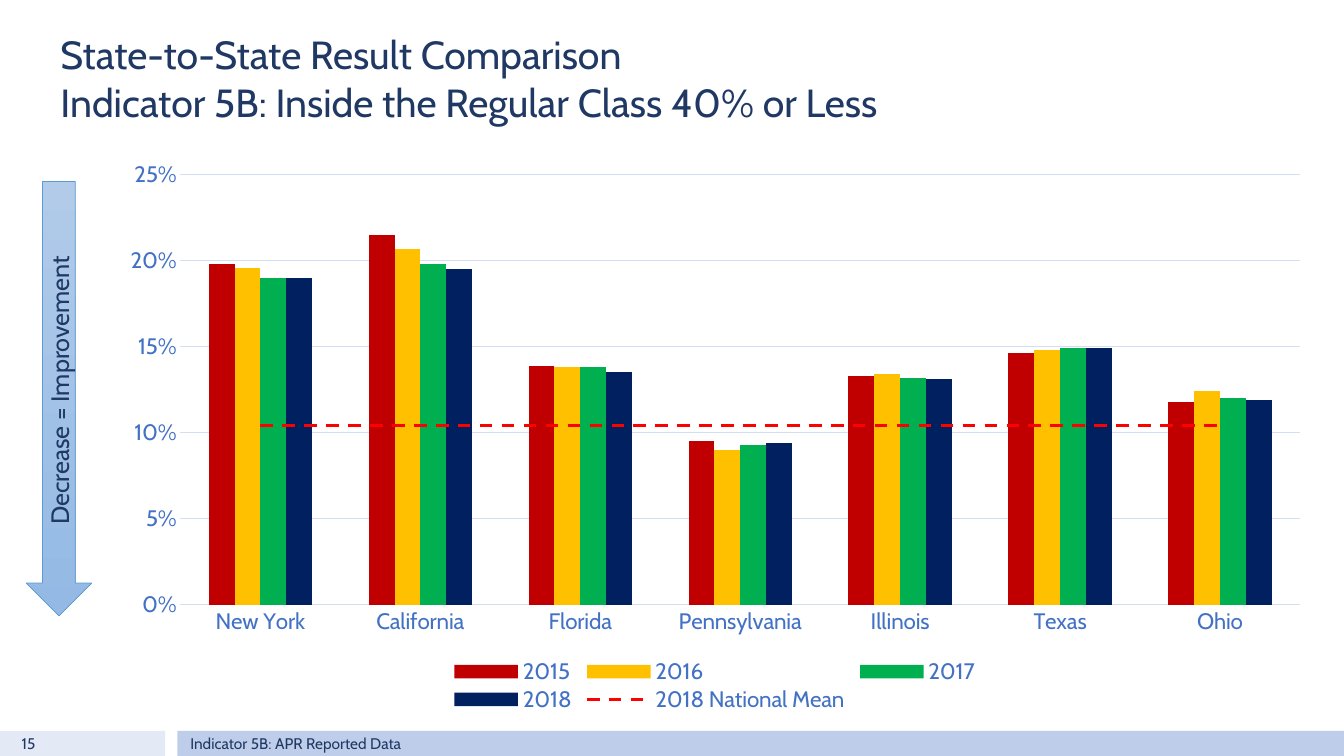
from dataclasses import dataclass

from lxml import etree
from pptx import Presentation
from pptx import util as u
from pptx.chart.data import CategoryChartData
from pptx.dml.color import RGBColor
from pptx.enum import chart as ch
from pptx.enum import dml, shapes, text
from pptx.oxml import parse_xml
from pptx.oxml.ns import nsdecls, qn

Pt = u.Pt


@dataclass(frozen=True)
class Theme:
    """Colours, font and type sizes of the slide."""
    font: str = "Cabin"
    title_size: int = 28
    arrow_size: int = 18
    chart_size: int = 16
    footer_size: int = 11
    ink: str = "1F3864"
    footer_ink: str = "203864"
    axis: str = "4372C5"
    grid: str = "D4DEF2"
    number_band: str = "E3EAF6"
    caption_band: str = "BECEEA"
    arrow_fill: tuple = ("B1CBE9", "93B9E4")
    arrow_line: str = "5B9BD5"
    years: tuple = ("C00000", "FFC000", "00B050", "002060")
    mean: str = "FF0000"


THEME = Theme()
STATES = ["New York", "California", "Florida", "Pennsylvania", "Illinois", "Texas", "Ohio"]
RESULTS = {
    "2015": [0.198, 0.215, 0.139, 0.095, 0.133, 0.146, 0.118],
    "2016": [0.196, 0.207, 0.138, 0.09, 0.134, 0.148, 0.124],
    "2017": [0.19, 0.198, 0.138, 0.093, 0.132, 0.149, 0.12],
    "2018": [0.19, 0.195, 0.135, 0.094, 0.131, 0.149, 0.119],
    "2018 National Mean": [0.104] * len(STATES),
}


def apply(target, values):
    """Set each attribute named in a dict of values."""
    for name, value in values.items():
        setattr(target, name, value)


def style_font(font, size, color):
    """Give a font the theme face, a size and a colour."""
    apply(font, {"name": THEME.font, "size": Pt(size), "bold": False})
    font.color.rgb = RGBColor.from_string(color)


def style_line(line, color, width):
    """Give a line a solid colour and a width."""
    line.color.rgb = RGBColor.from_string(color)
    line.width = Pt(width)


def write(frame, wording, size, color, align, anchor):
    """Fill a text frame with one formatted paragraph."""
    frame.text = wording
    apply(frame, {"word_wrap": True, "auto_size": text.MSO_AUTO_SIZE.NONE,
                  "vertical_anchor": anchor})
    paragraph = frame.paragraphs[0]
    paragraph.alignment = align
    for run in paragraph.runs:
        style_font(run.font, size, color)


def add_title(slide, box, wording):
    """Move the title placeholder to its box and write it."""
    title = slide.shapes.title
    apply(title, dict(zip(("left", "top", "width", "height"), map(Pt, box))))
    write(title.text_frame, wording, THEME.title_size, THEME.ink,
          text.PP_ALIGN.LEFT, text.MSO_ANCHOR.BOTTOM)


def add_direction_arrow(slide, box, wording):
    """Draw the downward arrow with its upward-reading label."""
    arrow = slide.shapes.add_shape(shapes.MSO_SHAPE.DOWN_ARROW, *map(Pt, box))
    arrow.shadow.inherit = False
    arrow.fill.gradient()
    arrow.fill.gradient_angle = 270
    for stop, color in zip(arrow.fill.gradient_stops, THEME.arrow_fill):
        stop.color.rgb = RGBColor.from_string(color)
    style_line(arrow.line, THEME.arrow_line, 0.5)
    write(arrow.text_frame, wording, THEME.arrow_size, THEME.ink,
          text.PP_ALIGN.CENTER, text.MSO_ANCHOR.MIDDLE)
    arrow.element.txBody.find(qn("a:bodyPr")).set("vert", "vert270")


def draw_mean_as_line(plot, mean):
    """Move the mean series from the columns to a line plot on the same axes."""
    columns = plot.series[0].format and mean.getparent()
    columns.remove(mean)
    for flag in mean.findall(qn("c:invertIfNegative")):
        mean.remove(flag)
    mean.find(qn("c:spPr")).addnext(
        parse_xml(f'<c:marker {nsdecls("c")}><c:symbol val="none"/></c:marker>'))
    etree.SubElement(mean, qn("c:smooth")).set("val", "0")
    line_plot = parse_xml(
        f'<c:lineChart {nsdecls("c")}><c:grouping val="standard"/>'
        '<c:varyColors val="0"/><c:marker val="1"/></c:lineChart>')
    line_plot.insert(2, mean)
    for axis in columns.findall(qn("c:axId")):
        etree.SubElement(line_plot, qn("c:axId")).set("val", axis.get("val"))
    columns.addnext(line_plot)


def set_layout(part, before, inner, **fractions):
    """Fix the place of a chart part as fractions of the chart."""
    for old in part.findall(qn("c:layout")):
        part.remove(old)
    target = '<c:layoutTarget val="inner"/>' if inner else ""
    modes = '<c:xMode val="edge"/><c:yMode val="edge"/>'
    sizes = "".join(f'<c:{name} val="{value}"/>' for name, value in fractions.items())
    part.find(qn(before)).addprevious(parse_xml(
        f'<c:layout {nsdecls("c")}><c:manualLayout>{target}{modes}{sizes}'
        "</c:manualLayout></c:layout>"))


def add_results_chart(slide, box):
    """Draw yearly columns by state with the national mean line."""
    data = CategoryChartData(number_format="0.0%")
    data.categories = STATES
    for name, values in RESULTS.items():
        data.add_series(name, values)
    chart = slide.shapes.add_chart(
        ch.XL_CHART_TYPE.COLUMN_CLUSTERED, *map(Pt, box), data).chart
    style_font(chart.font, THEME.chart_size, THEME.axis)
    apply(chart, {"has_title": False, "has_legend": True})
    apply(chart.legend, {"position": ch.XL_LEGEND_POSITION.BOTTOM, "include_in_layout": False})
    style_font(chart.legend.font, THEME.chart_size, THEME.axis)

    for axis in (chart.category_axis, chart.value_axis):
        apply(axis, {"major_tick_mark": ch.XL_TICK_MARK.NONE,
                     "minor_tick_mark": ch.XL_TICK_MARK.NONE})
        style_font(axis.tick_labels.font, THEME.chart_size, THEME.axis)
    style_line(chart.category_axis.format.line, THEME.grid, 0.75)
    results = chart.value_axis
    apply(results, {"minimum_scale": 0, "maximum_scale": 0.25, "major_unit": 0.05,
                    "has_major_gridlines": True})
    apply(results.tick_labels, {"number_format": "0%", "number_format_is_linked": False})
    results.format.line.fill.background()
    style_line(results.major_gridlines.format.line, THEME.grid, 0.75)

    plot = chart.plots[0]
    apply(plot, {"gap_width": 219, "overlap": 0, "vary_by_categories": False})
    *years, mean = plot.series
    for year, color in zip(years, THEME.years):
        year.format.fill.solid()
        year.format.fill.fore_color.rgb = RGBColor.from_string(color)
    style_line(mean.format.line, THEME.mean, 2.25)
    mean.format.line.dash_style = dml.MSO_LINE.DASH
    draw_mean_as_line(plot, mean.format.line and mean._element)

    plot_area = chart.element.find(".//" + qn("c:plotArea"))
    set_layout(plot_area, "c:barChart", True, x=0.062, y=0.043, w=0.918, h=0.755)
    legend = chart.element.find(".//" + qn("c:legend"))
    set_layout(legend, "c:overlay", False, x=0.28, y=0.89, w=0.44, h=0.1)


def add_footer(slide, box, number, caption):
    """Draw the two footer bands, then the slide number and caption."""
    left, top, width, height = box
    caption_left = left + 126.7
    bands = ((left, 118, THEME.number_band),
             (caption_left, left + width - caption_left, THEME.caption_band))
    for band_left, band_width, color in bands:
        band = slide.shapes.add_shape(
            shapes.MSO_SHAPE.RECTANGLE, *map(Pt, (band_left, top, band_width, height)))
        band.shadow.inherit = False
        band.fill.solid()
        band.fill.fore_color.rgb = RGBColor.from_string(color)
        band.line.fill.background()
    labels = ((left, 32.4, number, text.PP_ALIGN.RIGHT),
              (caption_left + 2.2, 720, caption, text.PP_ALIGN.LEFT))
    for label_left, label_width, wording, align in labels:
        label = slide.shapes.add_textbox(*map(Pt, (label_left, top, label_width, height)))
        write(label.text_frame, wording, THEME.footer_size, THEME.footer_ink,
              align, text.MSO_ANCHOR.MIDDLE)


def main():
    """Build the slide and save it."""
    deck = Presentation()
    apply(deck, {"slide_width": Pt(960), "slide_height": Pt(540)})
    slide = deck.slides.add_slide(deck.slide_layouts[5])
    add_title(slide, (36, 12.24, 816.5, 80.6),
              "State-to-State Result Comparison\v"
              "Indicator 5B: Inside the Regular Class 40% or Less")
    add_direction_arrow(slide, (18.7, 129.6, 46.8, 310.3), "Decrease = Improvement")
    add_results_chart(slide, (74.9, 107.3, 871.2, 406.8))
    add_footer(slide, (0, 522, 960, 18), "15", "Indicator 5B: APR Reported Data")
    deck.save("out.pptx")


if __name__ == "__main__":
    main()
